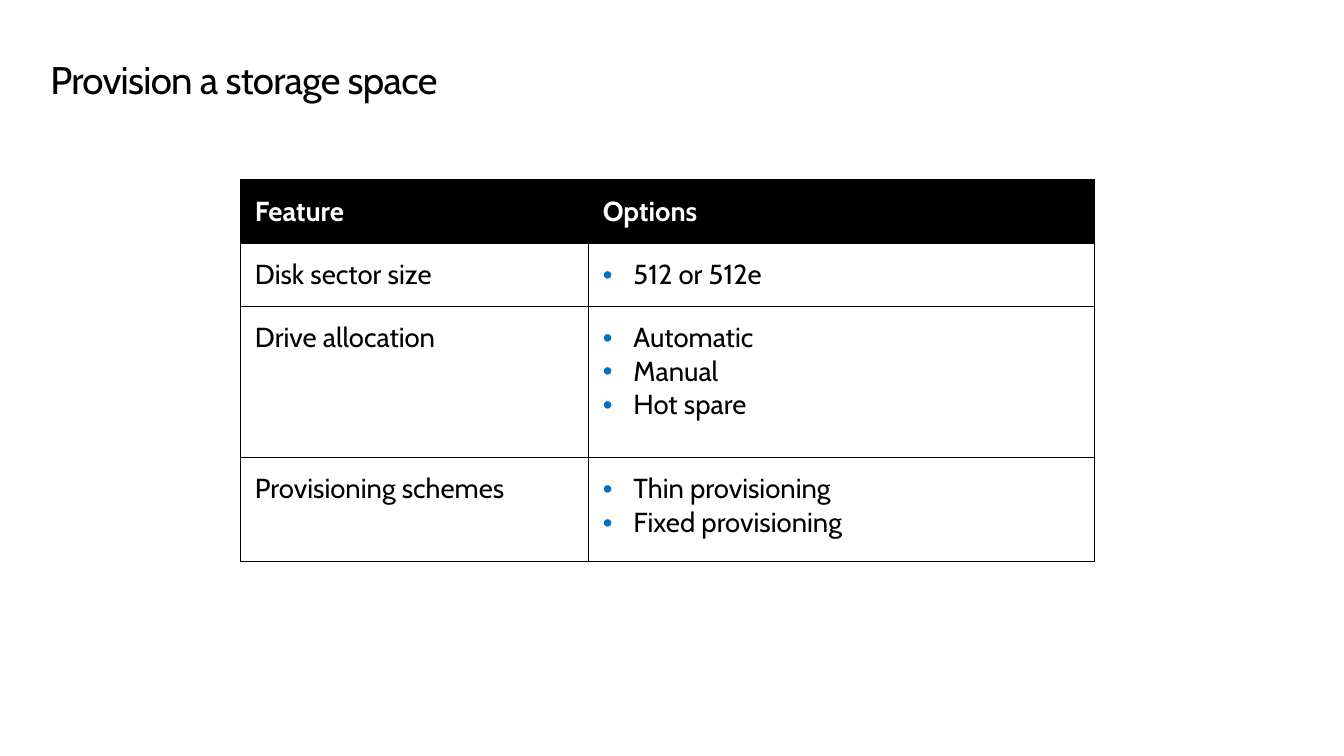
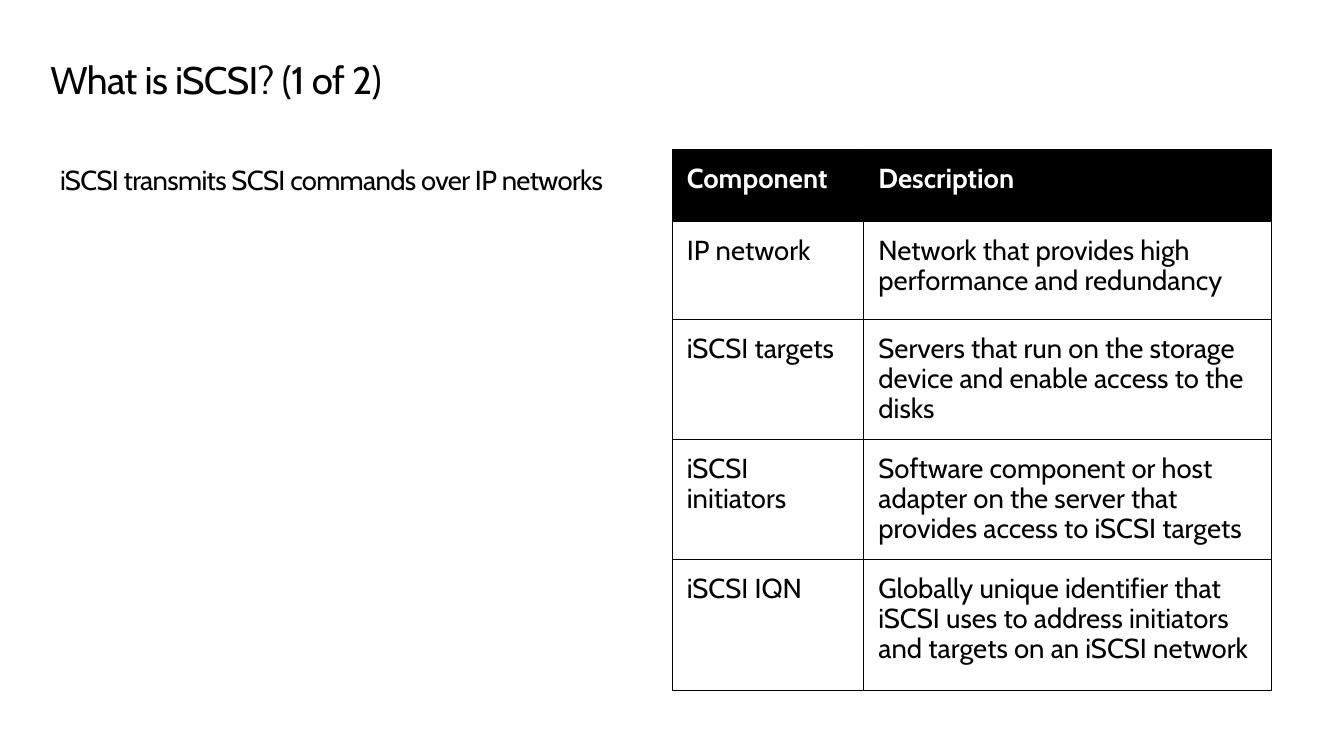
"""Build two slides on storage spaces and iSCSI, each with a title and a bordered table."""
from dataclasses import dataclass

from lxml.etree import SubElement
from pptx import Presentation
from pptx.dml.color import RGBColor
from pptx.enum.text import MSO_ANCHOR, MSO_AUTO_SIZE, PP_ALIGN
from pptx.oxml.ns import qn
from pptx.util import Inches, Pt


@dataclass(frozen=True)
class Theme:
    font: str = "Cabin"
    ink: RGBColor = RGBColor(0x00, 0x00, 0x00)
    paper: RGBColor = RGBColor(0xFF, 0xFF, 0xFF)
    bullet: RGBColor = RGBColor(0x00, 0x70, 0xC0)
    title_size: Pt = Pt(28)
    body_size: Pt = Pt(20)
    rule: Pt = Pt(0.75)
    tracking: str = "-50"
    tight: float = 0.9
    cell_inset: Inches = Inches(0.15)
    bullet_indent: Inches = Inches(0.31)


theme = Theme()
deck = Presentation()
deck.slide_width, deck.slide_height = Inches(13.6), Inches(7.65)
TITLE_ONLY = deck.slide_layouts[5]
LEFT, CONTENT_WIDTH = 3.75, 92.72

PAGES = [
    {
        "title": "Provision a storage space",
        "lead": "",
        "corner": (17.87, 23.79),
        "columns": (25.88, 37.72),
        "rows": (8.37, 8.37, 20, 13.73),
        "line_spacing": 1.0,
        "bulleted": True,
        "cells": [
            ("Feature", ["Options"]),
            ("Disk sector size", ["512 or 512e"]),
            ("Drive allocation", ["Automatic", "Manual", "Hot spare"]),
            ("Provisioning schemes", ["Thin provisioning", "Fixed provisioning"]),
        ],
    },
    {
        "title": "What is iSCSI? (1 of 2)",
        "lead": "iSCSI transmits SCSI commands over IP networks",
        "corner": (50, 19.74),
        "columns": (14.26, 30.37),
        "rows": (9.54, 12.94, 15.69, 15.69, 17.39),
        "line_spacing": theme.tight,
        "bulleted": False,
        "cells": [
            ("Component", ["Description"]),
            ("IP network", ["Network that provides high performance and redundancy"]),
            ("iSCSI targets", ["Servers that run on the storage device and enable access to the disks"]),
            ("iSCSI initiators", ["Software component or host adapter on the server that provides access to iSCSI targets"]),
            ("iSCSI IQN", ["Globally unique identifier that iSCSI uses to address initiators and targets on an iSCSI network"]),
        ],
    },
]


def area(left, top, width, height):
    """Turn percentages of the slide into a position and a size."""
    across, down = deck.slide_width / 100, deck.slide_height / 100
    return [round(length) for length in (left * across, top * down, width * across, height * down)]


def write(para, text, size=theme.body_size, color=theme.ink, bold=False, tracking="0"):
    """Add one styled run to a paragraph."""
    span = para.add_run()
    span.text = text
    span.font.name, span.font.size, span.font.bold = theme.font, size, bold
    span.font.color.rgb = color
    span.font._element.set("spc", tracking)


for page in PAGES:
    slide = deck.slides.add_slide(TITLE_ONLY)

    title = slide.shapes.title
    title.left, title.top, title.width, title.height = area(LEFT, 8.1, CONTENT_WIDTH, 5.88)
    frame = title.text_frame
    frame.margin_left = frame.margin_top = frame.margin_bottom = 0
    frame.margin_right = Inches(0.1)
    frame.vertical_anchor = MSO_ANCHOR.TOP
    frame.auto_size = MSO_AUTO_SIZE.NONE
    para = frame.paragraphs[0]
    para.alignment = PP_ALIGN.LEFT
    para.line_spacing = theme.tight
    write(para, page["title"], size=theme.title_size, tracking=theme.tracking)

    place = area(*page["corner"], sum(page["columns"]), sum(page["rows"]))
    table = slide.shapes.add_table(len(page["rows"]), len(page["columns"]), *place).table
    table.horz_banding = False
    for column, share in zip(table.columns, page["columns"]):
        column.width = area(0, 0, share, 0)[2]
    for row, share in zip(table.rows, page["rows"]):
        row.height = area(0, 0, 0, share)[3]

    for row_index, (label, details) in enumerate(page["cells"]):
        header = row_index == 0
        for column_index, lines in enumerate(([label], details)):
            cell = table.cell(row_index, column_index)
            cell.margin_left = cell.margin_right = theme.cell_inset
            cell.margin_top = cell.margin_bottom = theme.cell_inset
            properties = cell._tc.get_or_add_tcPr()
            for side in ("a:lnL", "a:lnR", "a:lnT", "a:lnB"):
                border = SubElement(properties, qn(side), w=str(theme.rule))
                SubElement(SubElement(border, qn("a:solidFill")), qn("a:srgbClr"), val=str(theme.ink))
            cell.fill.solid()
            cell.fill.fore_color.rgb = theme.ink if header else theme.paper

            for line_index, line in enumerate(lines):
                frame = cell.text_frame
                para = frame.add_paragraph() if line_index else frame.paragraphs[0]
                para.line_spacing = page["line_spacing"]
                write(para, line, color=theme.paper if header else theme.ink, bold=header)
                if page["bulleted"] and column_index == 1 and not header:
                    settings = para._p.get_or_add_pPr()
                    settings.set("marL", str(theme.bullet_indent))
                    settings.set("indent", str(-theme.bullet_indent))
                    SubElement(SubElement(settings, qn("a:buClr")), qn("a:srgbClr"), val=str(theme.bullet))
                    SubElement(settings, qn("a:buFont"), typeface="Arial")
                    SubElement(settings, qn("a:buChar"), char="•")

    if page["lead"]:
        box = slide.shapes.add_textbox(*area(LEFT, 20.92, CONTENT_WIDTH, 72.68))
        box.text_frame.word_wrap = True
        para = box.text_frame.paragraphs[0]
        para.space_before = Pt(12)
        write(para, page["lead"], tracking=theme.tracking)

deck.save("out.pptx")
